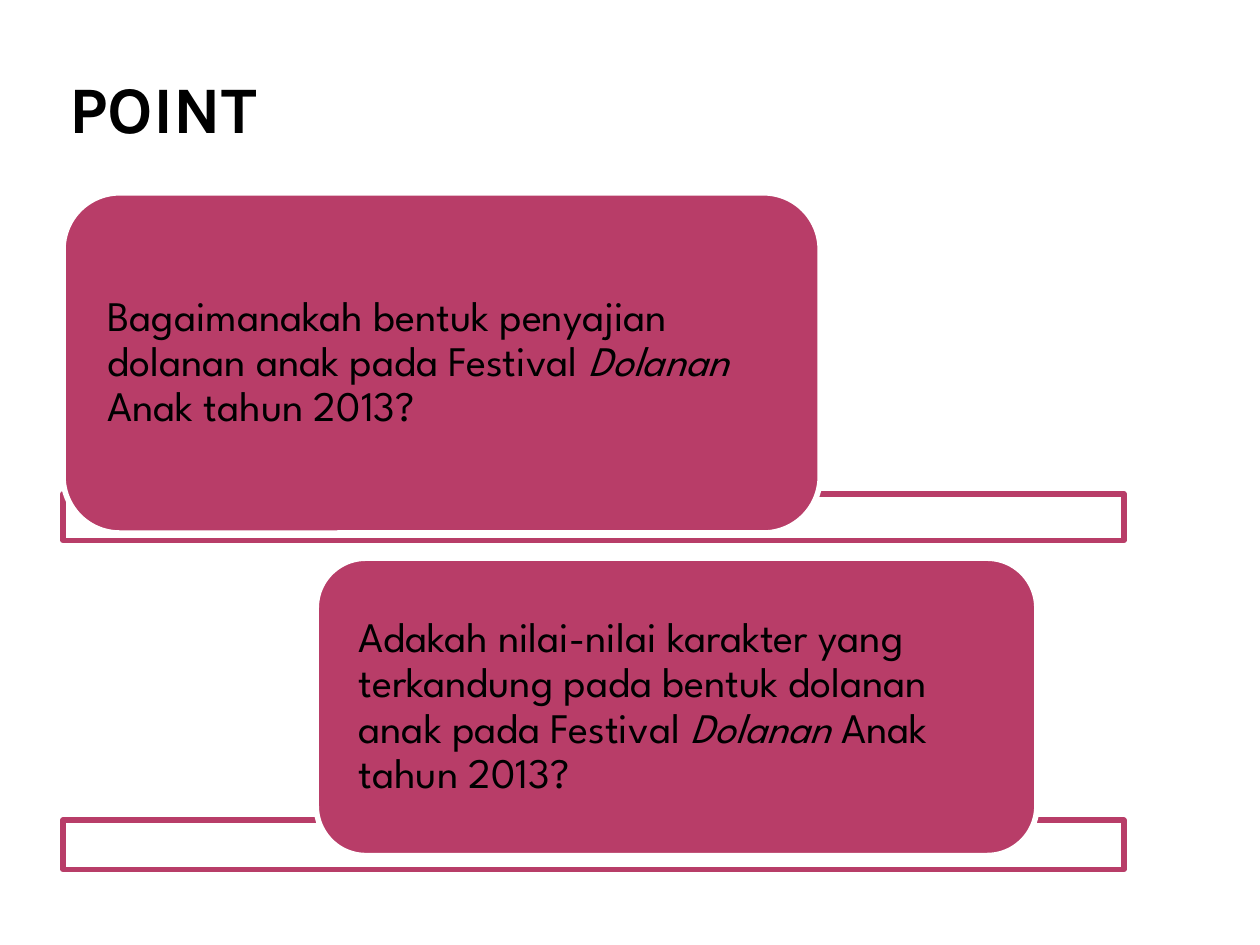
import pptx
import pptx.util
import pptx.dml.color
import pptx.enum.shapes
import pptx.enum.text

Pt = pptx.util.Pt
SHAPES = pptx.enum.shapes.MSO_SHAPE
ALIGN = pptx.enum.text.PP_ALIGN
ANCHOR = pptx.enum.text.MSO_ANCHOR
BLACK = pptx.dml.color.RGBColor(0x00, 0x00, 0x00)
WHITE = pptx.dml.color.RGBColor(0xFF, 0xFF, 0xFF)
ROSE = pptx.dml.color.RGBColor(0xB8, 0x3D, 0x68)


def add_span(para, text, font="League Spartan", size=24, bold=False, italic=False):
    span = para.add_run()
    span.text = text
    span.font.name = font
    span.font.size = Pt(size)
    span.font.bold = bold
    span.font.italic = italic
    span.font.color.rgb = BLACK


def add_panel(page, kind, place, fill, line):
    panel = page.shapes.add_shape(kind, *[Pt(length) for length in place])
    panel.shadow.inherit = False
    panel.fill.solid()
    panel.fill.fore_color.rgb = fill
    panel.line.color.rgb = line
    panel.line.width = Pt(3.15)
    return panel


deck = pptx.Presentation()
deck.slide_width = Pt(720)
deck.slide_height = Pt(540)
page = deck.slides.add_slide(deck.slide_layouts[5])

title = page.shapes.title
title.left, title.top, title.width, title.height = Pt(36), Pt(21.6), Pt(552), Pt(62.6)
frame = title.text_frame
frame.vertical_anchor = ANCHOR.BOTTOM
frame.margin_left = frame.margin_right = Pt(3.6)
frame.margin_top = frame.margin_bottom = 0
frame.paragraphs[0].alignment = ALIGN.LEFT
add_span(frame.paragraphs[0], "POINT", font="Karla", size=38, bold=True)

# Each question: bar top and height, box place, words before the italic one
questions = [
    (282.2, 26.6, (36, 110.2, 432.7, 194.4),
     "Bagaimanakah bentuk penyajian dolanan anak pada Festival "),
    (468.7, 28.1, (180.7, 319, 411.8, 169.9),
     "Adakah nilai-nilai karakter yang terkandung pada bentuk dolanan anak pada Festival "),
]
for bar_top, bar_height, box_place, opening in questions:
    add_panel(page, SHAPES.RECTANGLE, (36, bar_top, 606.2, bar_height), WHITE, ROSE)
    box = add_panel(page, SHAPES.ROUNDED_RECTANGLE, box_place, ROSE, WHITE)
    frame = box.text_frame
    frame.word_wrap = True
    frame.vertical_anchor = ANCHOR.MIDDLE
    frame.margin_left = frame.margin_right = Pt(15.9)
    frame.margin_top = frame.margin_bottom = 0
    para = frame.paragraphs[0]
    para.alignment = ALIGN.LEFT
    para.line_spacing = 0.9
    add_span(para, opening)
    add_span(para, "Dolanan ", italic=True)
    add_span(para, "Anak tahun 2013?")

deck.save("out.pptx")
